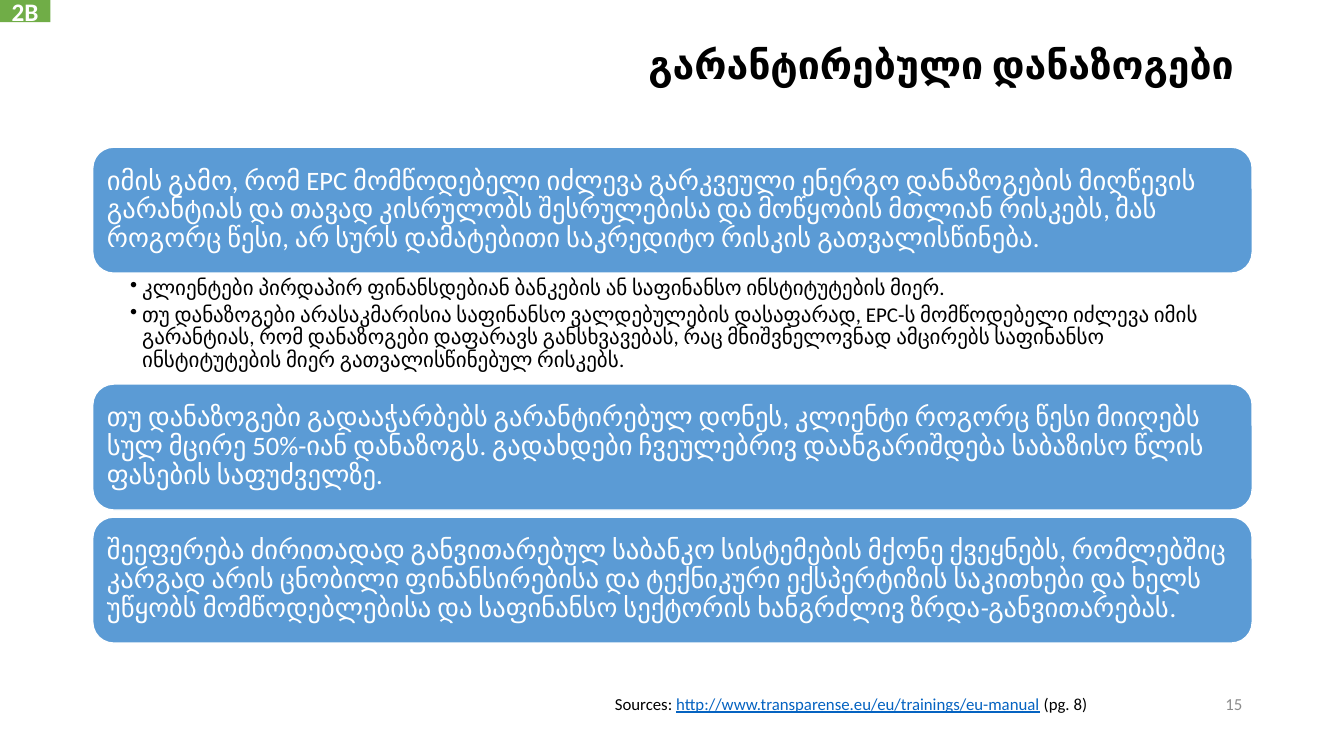
from dataclasses import dataclass
from typing import Any

from lxml import etree
from pptx import Presentation
from pptx.dml.color import RGBColor
from pptx.enum.shapes import MSO_SHAPE
from pptx.enum.text import MSO_ANCHOR, PP_ALIGN
from pptx.oxml.ns import qn
from pptx.util import Pt

PX = 9144
RECTANGLE, ROUNDED = MSO_SHAPE.RECTANGLE, MSO_SHAPE.ROUNDED_RECTANGLE
TOP, MIDDLE = MSO_ANCHOR.TOP, MSO_ANCHOR.MIDDLE
LEFT, CENTER, RIGHT = PP_ALIGN.LEFT, PP_ALIGN.CENTER, PP_ALIGN.RIGHT


@dataclass(frozen=True)
class Theme:
    font: str = "Calibri"
    blue: str = "5B9BD5"
    green: str = "70AD47"
    white: str = "FFFFFF"
    black: str = "000000"
    grey: str = "8C8C8C"
    link: str = "0563C1"
    title_size: int = 28
    statement_size: int = 19
    module_size: int = 18
    detail_size: int = 15
    footer_size: int = 12


THEME = Theme()


@dataclass(frozen=True)
class Box:
    left: int
    top: int
    width: int
    height: int


@dataclass(frozen=True)
class Style:
    size: int
    color: str
    bold: bool = False
    align: Any = LEFT
    anchor: Any = TOP
    line_spacing: float = 1.0
    gap: int = 0
    insets: tuple[int, int, int, int] = (10, 5, 10, 5)
    bulleted: bool = False


@dataclass(frozen=True)
class Run:
    text: str
    color: str | None = None
    underline: bool = False


@dataclass(frozen=True)
class Panel:
    box: Box
    fill: str
    style: Style
    text: str
    preset: Any = ROUNDED
    outline: str | None = None


@dataclass(frozen=True)
class Note:
    box: Box
    style: Style
    paragraphs: tuple[tuple[Run, ...], ...]


STATEMENT = Style(THEME.statement_size, THEME.white, anchor=MIDDLE,
                  line_spacing=0.9, insets=(8, 8, 8, 8))
DETAIL = Style(THEME.detail_size, THEME.black, line_spacing=0.9, gap=3,
               insets=(37, 3, 15, 3), bulleted=True)
TITLE = Style(THEME.title_size, THEME.black, bold=True, align=RIGHT, line_spacing=0.9)
MODULE = Style(THEME.module_size, THEME.white, bold=True, align=CENTER, anchor=MIDDLE)
SOURCE = Style(THEME.footer_size, THEME.black)
PAGE = Style(THEME.footer_size, THEME.grey, align=RIGHT, anchor=MIDDLE)

MARGIN, CONTENT_WIDTH, STATEMENT_HEIGHT = 92, 1150, 125

STATEMENTS = (
    (146, "იმის გამო, რომ EPC მომწოდებელი იძლევა გარკვეული ენერგო დანაზოგების მიღწევის "
          "გარანტიას და თავად კისრულობს შესრულებისა და მოწყობის მთლიან რისკებს, მას "
          "როგორც წესი, არ სურს დამატებითი საკრედიტო რისკის გათვალისწინება."),
    (381, "თუ დანაზოგები გადააჭარბებს გარანტირებულ დონეს, კლიენტი როგორც წესი მიიღებს "
          "სულ მცირე 50%-იან დანაზოგს. გადახდები ჩვეულებრივ დაანგარიშდება საბაზისო წლის "
          "ფასების საფუძველზე."),
    (513, "შეეფერება ძირითადად განვითარებულ საბანკო სისტემების მქონე ქვეყნებს, რომლებშიც "
          "კარგად არის ცნობილი ფინანსირებისა და ტექნიკური ექსპერტიზის საკითხები და ხელს "
          "უწყობს მომწოდებლებისა და საფინანსო სექტორის ხანგრძლივ ზრდა-განვითარებას."),
)

PANELS = tuple(
    Panel(Box(MARGIN, top, CONTENT_WIDTH, STATEMENT_HEIGHT), THEME.blue, STATEMENT,
          text, outline=THEME.white)
    for top, text in STATEMENTS
) + (Panel(Box(0, 0, 50, 22), THEME.green, MODULE, "2B", preset=RECTANGLE),)

NOTES = (
    Note(Box(MARGIN, 40, CONTENT_WIDTH, 57), TITLE,
         ((Run("გარანტირებული დანაზოგები "),),)),
    Note(Box(MARGIN, 272, CONTENT_WIDTH, 110), DETAIL, (
        (Run("კლიენტები პირდაპირ ფინანსდებიან ბანკების ან საფინანსო ინსტიტუტების მიერ."),),
        (Run("თუ დანაზოგები არასაკმარისია საფინანსო ვალდებულების დასაფარად, EPC-ს "
             "მომწოდებელი იძლევა იმის გარანტიას, რომ დანაზოგები დაფარავს განსხვავებას, "
             "რაც მნიშვნელოვნად ამცირებს საფინანსო ინსტიტუტების მიერ გათვალისწინებულ "
             "რისკებს."),),
    )),
    Note(Box(600, 683, 660, 30), SOURCE, ((
        Run("Sources: "),
        Run("http://www.transparense.eu/eu/trainings/eu-manual", THEME.link, True),
        Run(" (pg. 8)"),
    ),)),
    Note(Box(942, 678, 300, 40), PAGE, ((Run("15"),),)),
)


def apply(target: Any, values: dict[str, Any]) -> None:
    for name, value in values.items():
        setattr(target, name, value)


def emu(box: Box) -> tuple[int, int, int, int]:
    return box.left * PX, box.top * PX, box.width * PX, box.height * PX


def add_bullet(paragraph: Any) -> None:
    properties = paragraph._p.get_or_add_pPr()
    properties.set("marL", str(12 * PX))
    properties.set("indent", str(-12 * PX))
    etree.SubElement(properties, qn("a:buChar")).set("char", "•")


def write(frame: Any, style: Style, paragraphs: tuple[tuple[Run, ...], ...]) -> None:
    left, top, right, bottom = (inset * PX for inset in style.insets)
    apply(frame, {"word_wrap": True, "vertical_anchor": style.anchor,
                  "margin_left": left, "margin_top": top,
                  "margin_right": right, "margin_bottom": bottom})
    for index, runs in enumerate(paragraphs):
        paragraph = frame.add_paragraph() if index else frame.paragraphs[0]
        if style.bulleted:
            add_bullet(paragraph)
        apply(paragraph, {"alignment": style.align, "line_spacing": style.line_spacing,
                          "space_after": Pt(style.gap)})
        for part in runs:
            run = paragraph.add_run()
            run.text = part.text
            apply(run.font, {"name": THEME.font, "size": Pt(style.size),
                             "bold": style.bold, "underline": part.underline})
            run.font.color.rgb = RGBColor.from_string(part.color or style.color)


def draw_panel(slide: Any, panel: Panel) -> None:
    shape = slide.shapes.add_shape(panel.preset, *emu(panel.box))
    shape.shadow.inherit = False
    shape.fill.solid()
    shape.fill.fore_color.rgb = RGBColor.from_string(panel.fill)
    if panel.outline:
        shape.line.color.rgb = RGBColor.from_string(panel.outline)
        shape.line.width = Pt(1)
    else:
        shape.line.fill.background()
    write(shape.text_frame, panel.style, ((Run(panel.text),),))


def draw_note(slide: Any, note: Note) -> None:
    textbox = slide.shapes.add_textbox(*emu(note.box))
    write(textbox.text_frame, note.style, note.paragraphs)


def main() -> None:
    deck = Presentation()
    apply(deck, {"slide_width": 1333 * PX, "slide_height": 750 * PX})
    slide = deck.slides.add_slide(deck.slide_layouts[6])
    for panel in PANELS:
        draw_panel(slide, panel)
    for note in NOTES:
        draw_note(slide, note)
    deck.save("out.pptx")


if __name__ == "__main__":
    main()
